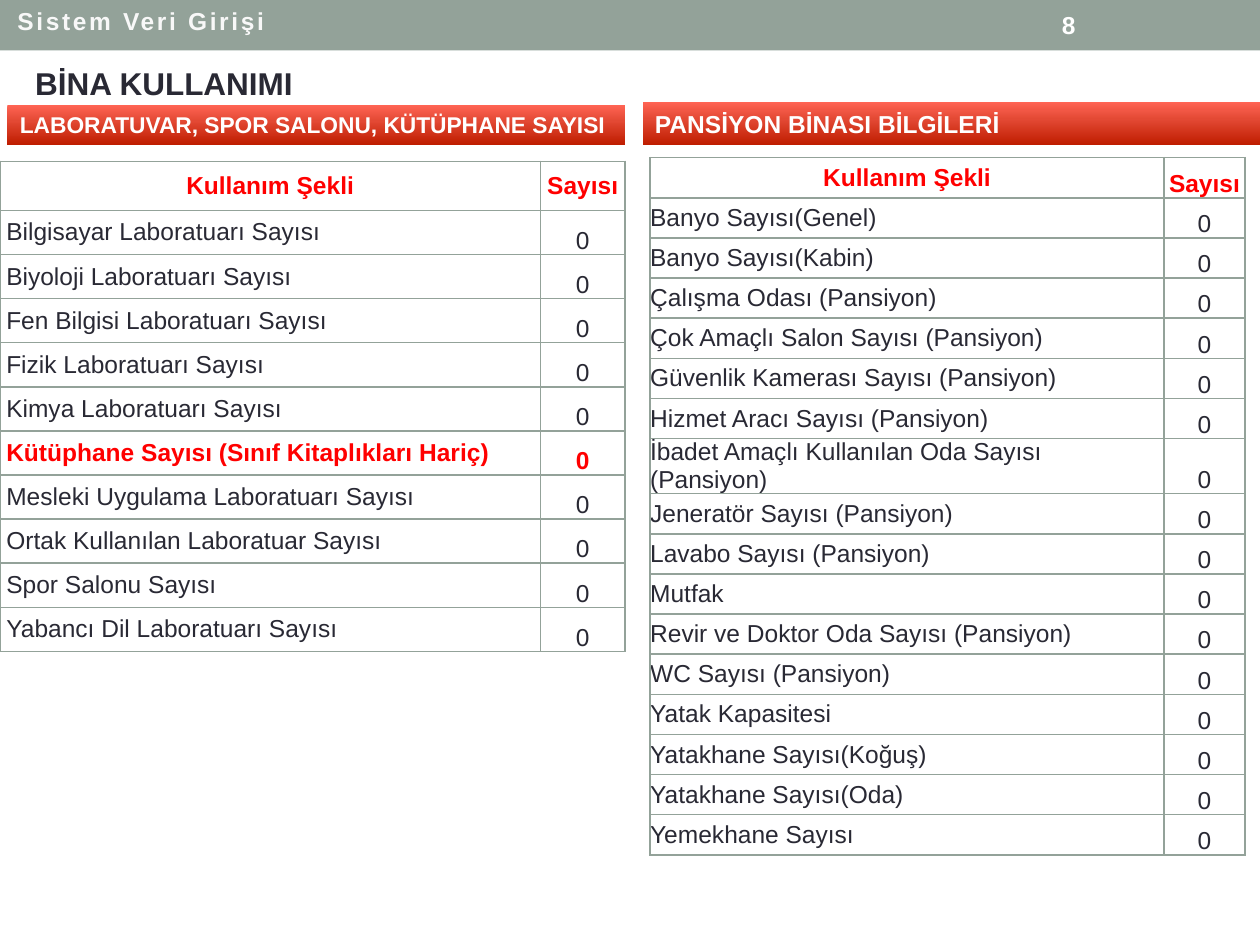
from dataclasses import dataclass
import copy

import pptx
import pptx.dml.color
import pptx.enum.shapes
import pptx.enum.text
import pptx.oxml
import pptx.oxml.ns
import pptx.util

Inches = pptx.util.Inches
Anchor = pptx.enum.text.MSO_ANCHOR
Align = pptx.enum.text.PP_ALIGN

SAGE, DARK, RED, WHITE = "93A299", "292934", "FF0000", "FFFFFF"
BANNER_STOPS = [(0, "FF6454"), (0.4, "E34934"), (1, "BF1D00")]
HEADINGS = ("Kullanım Şekli", "Sayısı")


@dataclass
class Box:
    left: float
    top: float
    width: float
    height: float

    def lengths(self) -> list:
        return [Inches(value) for value in (self.left, self.top, self.width, self.height)]


@dataclass
class Label:
    text: str
    box: Box
    size: float
    color: str
    anchor: Anchor = Anchor.TOP
    wrap: bool = True
    spacing: int = 0


@dataclass
class CountTable:
    box: Box
    count_width: float
    header_height: float
    indent: float
    heading_anchor: Anchor
    names: list
    highlight: str = ""


LABELS = [
    Label("8", Box(8.33, 0.02, 1.17, 0.36), 14, WHITE, Anchor.MIDDLE),
    Label("BİNA KULLANIMI", Box(0.18, 0.46, 2.61, 1.01), 18, DARK),
    Label("Sistem Veri Girişi", Box(0.04, 0, 2.32, 0.34), 14, "F8F8F8", wrap=False, spacing=150),
]

BANNERS = [
    Label("LABORATUVAR, SPOR SALONU, KÜTÜPHANE SAYISI", Box(0.06, 0.83, 4.9, 0.32), 13, WHITE, Anchor.MIDDLE),
    Label("PANSİYON BİNASI BİLGİLERİ", Box(5.1, 0.81, 4.9, 0.34), 14, WHITE, Anchor.MIDDLE),
]

TABLES = [
    CountTable(Box(0, 1.28, 4.96, 3.89), 0.67, 0.39, 0.05, Anchor.MIDDLE, [
        "Bilgisayar Laboratuarı Sayısı",
        "Biyoloji Laboratuarı Sayısı",
        "Fen Bilgisi Laboratuarı Sayısı",
        "Fizik Laboratuarı Sayısı",
        "Kimya Laboratuarı Sayısı",
        "Kütüphane Sayısı (Sınıf Kitaplıkları Hariç)",
        "Mesleki Uygulama Laboratuarı Sayısı",
        "Ortak Kullanılan Laboratuar Sayısı",
        "Spor Salonu Sayısı",
        "Yabancı Dil Laboratuarı Sayısı",
    ], highlight="Kütüphane Sayısı (Sınıf Kitaplıkları Hariç)"),
    CountTable(Box(5.16, 1.25, 4.72, 5.42), 0.64, 0.32, 0, Anchor.BOTTOM, [
        "Banyo Sayısı(Genel)",
        "Banyo Sayısı(Kabin)",
        "Çalışma Odası (Pansiyon)",
        "Çok Amaçlı Salon Sayısı (Pansiyon)",
        "Güvenlik Kamerası Sayısı (Pansiyon)",
        "Hizmet Aracı Sayısı (Pansiyon)",
        "İbadet Amaçlı Kullanılan Oda Sayısı (Pansiyon)",
        "Jeneratör Sayısı (Pansiyon)",
        "Lavabo Sayısı (Pansiyon)",
        "Mutfak",
        "Revir ve Doktor Oda Sayısı (Pansiyon)",
        "WC Sayısı (Pansiyon)",
        "Yatak Kapasitesi",
        "Yatakhane Sayısı(Koğuş)",
        "Yatakhane Sayısı(Oda)",
        "Yemekhane Sayısı",
    ]),
]


def rgb(value: str) -> pptx.dml.color.RGBColor:
    return pptx.dml.color.RGBColor.from_string(value)


def write(text_frame, text: str, size: float, color: str, bold: bool, align=Align.LEFT) -> None:
    paragraph = text_frame.paragraphs[0]
    paragraph.text = text
    paragraph.alignment = align
    font = paragraph.font
    font.name, font.size, font.bold = "Arial", pptx.util.Pt(size), bold
    font.color.rgb = rgb(color)


def fill_label(shape, label: Label) -> None:
    text_frame = shape.text_frame
    text_frame.word_wrap = label.wrap
    text_frame.vertical_anchor = label.anchor
    write(text_frame, label.text, label.size, label.color, True)
    if label.spacing:
        text_frame.paragraphs[0].runs[0].font._element.set("spc", str(label.spacing))


def add_rectangle(slide, box: Box):
    shape = slide.shapes.add_shape(pptx.enum.shapes.MSO_SHAPE.RECTANGLE, *box.lengths())
    shape.shadow.inherit = False
    shape.line.fill.background()
    return shape


def add_banner(slide, label: Label) -> None:
    shape = add_rectangle(slide, label.box)
    shape.fill.gradient()
    shape.fill.gradient_angle = 270
    stop_list = shape._element.spPr.find(".//" + pptx.oxml.ns.qn("a:gsLst"))
    stop_list.append(copy.deepcopy(stop_list[0]))
    for stop, (position, color) in zip(shape.fill.gradient_stops, BANNER_STOPS):
        stop.position = position
        stop.color.rgb = rgb(color)
    fill_label(shape, label)


def style_cell(cell, text: str, color: str, bold: bool, align, anchor, indent: float = 0) -> None:
    cell.margin_left = Inches(indent)
    cell.margin_right = cell.margin_top = cell.margin_bottom = 0
    cell.vertical_anchor = anchor
    cell.fill.background()
    write(cell.text_frame, text, 14, color, bold, align)
    properties = cell._tc.get_or_add_tcPr()
    namespace = pptx.oxml.ns.nsdecls("a")
    for index, side in enumerate("LRTB"):
        border = pptx.oxml.parse_xml(
            f'<a:ln{side} {namespace} w="12700"><a:solidFill><a:srgbClr val="{SAGE}"/></a:solidFill></a:ln{side}>'
        )
        properties.insert(index, border)


def add_count_table(slide, spec_table: CountTable) -> None:
    box, names = spec_table.box, spec_table.names
    table = slide.shapes.add_table(len(names) + 1, 2, *box.lengths()).table
    table.first_row = table.horz_banding = False
    table.columns[0].width = Inches(box.width - spec_table.count_width)
    table.columns[1].width = Inches(spec_table.count_width)
    for row in table.rows:
        row.height = Inches((box.height - spec_table.header_height) / len(names))
    table.rows[0].height = Inches(spec_table.header_height)
    for column, (heading, anchor) in enumerate(zip(HEADINGS, (Anchor.MIDDLE, spec_table.heading_anchor))):
        style_cell(table.cell(0, column), heading, RED, True, Align.CENTER, anchor)
    for row, name in enumerate(names, start=1):
        bold = name == spec_table.highlight
        color = RED if bold else DARK
        style_cell(table.cell(row, 0), name, color, bold, Align.LEFT, Anchor.MIDDLE, spec_table.indent)
        style_cell(table.cell(row, 1), "0", color, bold, Align.CENTER, Anchor.BOTTOM)


def main() -> None:
    """Build the building-usage slide and save it."""
    presentation = pptx.Presentation()
    presentation.slide_width, presentation.slide_height = Inches(10), Inches(7.5)
    slide = presentation.slides.add_slide(presentation.slide_layouts[6])
    header = add_rectangle(slide, Box(0, 0, 10, 0.4))
    header.fill.solid()
    header.fill.fore_color.rgb = rgb(SAGE)
    for count_table in TABLES:
        add_count_table(slide, count_table)
    for banner in BANNERS:
        add_banner(slide, banner)
    for label in LABELS:
        fill_label(slide.shapes.add_textbox(*label.box.lengths()), label)
    presentation.save("out.pptx")


if __name__ == "__main__":
    main()
